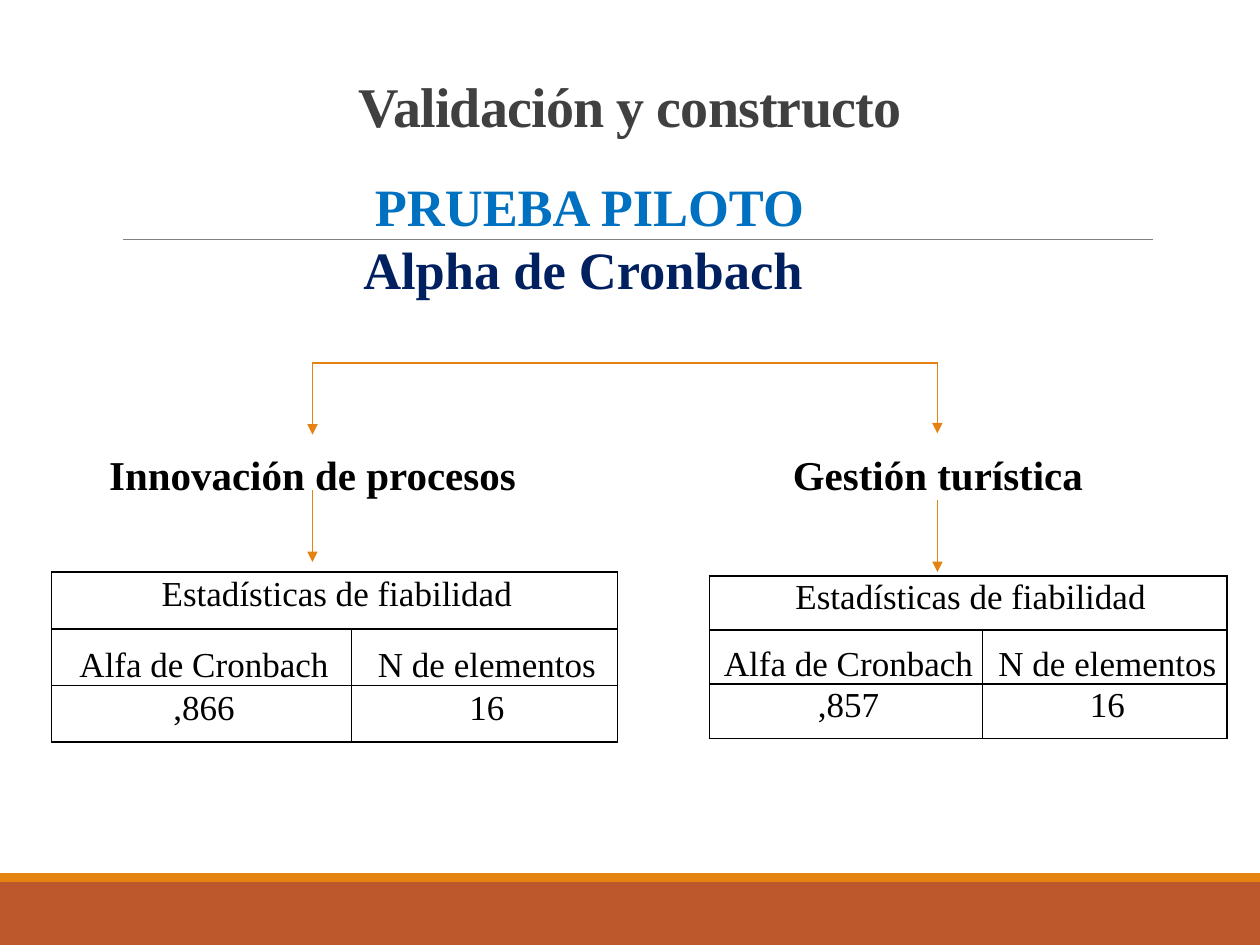
from pptx import Presentation
from pptx.dml.color import RGBColor
from pptx.enum.shapes import MSO_CONNECTOR, MSO_SHAPE
from pptx.enum.text import MSO_ANCHOR, PP_ALIGN
from pptx.oxml.ns import qn
from pptx.util import Inches, Pt
from lxml import etree

LINE, RECT = MSO_CONNECTOR.STRAIGHT, MSO_SHAPE.RECTANGLE
MID, LOW, CENTER = MSO_ANCHOR.MIDDLE, MSO_ANCHOR.BOTTOM, PP_ALIGN.CENTER
FONT = "Times New Roman"
BLACK, DARK, GRAY = (RGBColor.from_string(c) for c in ("000000", "404040", "808080"))
BLUE, NAVY = RGBColor(0x00, 0x70, 0xC0), RGBColor(0x00, 0x20, 0x60)
ORANGE, RUST = RGBColor(0xE4, 0x83, 0x12), RGBColor(0xBD, 0x58, 0x2C)

# Content
TITLE = "Validación y constructo"
HEADS = [("PRUEBA PILOTO", BLUE), ("Alpha de Cronbach ", NAVY)]
BANDS = [(7, 0.5, RUST), (6.93, 0.07, ORANGE)]
CAPTION = "Estadísticas de fiabilidad"
COLS = ["Alfa de Cronbach", "N de elementos"]
# Each branch: label and its box, arrow x and tops, table place, columns, row height, values
BRANCHES = [
    dict(label="Innovación de procesos", box=(0.43, 3.43, 4.85, 0.66),
         x=2.48, tops=(2.88, 3.89), at=(0.41, 4.54), cols=(2.38, 2.11),
         row=0.45, vals=[",866", "16"]),
    dict(label="Gestión turística", box=(5.64, 3.43, 4.36, 0.66),
         x=7.44, tops=(2.87, 3.97), at=(5.63, 4.57), cols=(2.17, 1.94),
         row=0.43, vals=[",857", "16"]),
]
ARROW = 0.57   # arrow length
SHIFT = 0.85   # right inset that centres a label under its arrow

deck = Presentation()
deck.slide_width, deck.slide_height = Inches(10), Inches(7.5)
slide = deck.slides.add_slide(deck.slide_layouts[5])
shapes = slide.shapes


def style(para, size, color, bold=False):
    para.alignment = CENTER
    for run in para.runs:
        font = run.font
        font.name, font.size, font.bold = FONT, Pt(size), bold
        font.color.rgb = color


def add_line(x1, y1, x2, y2, color, width=1, arrow=False):
    line = shapes.add_connector(LINE, *map(Inches, (x1, y1, x2, y2)))
    line.line.color.rgb, line.line.width = color, Pt(width)
    props = line._element.spPr
    if arrow:
        etree.SubElement(props.find(qn("a:ln")), qn("a:tailEnd"), type="triangle")
    etree.SubElement(props, qn("a:effectLst"))


def add_text(box, items, size, right=0.1):
    frame = shapes.add_textbox(*map(Inches, box)).text_frame
    frame.word_wrap, frame.margin_right = True, Inches(right)
    frame.text = "\n".join(text for text, _ in items)
    for para, (_, color) in zip(frame.paragraphs, items):
        style(para, size, color, True)
    return frame


def fill_cell(cell, text, anchor):
    cell.text = text
    cell.margin_left = cell.margin_right = cell.margin_top = cell.margin_bottom = 0
    cell.vertical_anchor = anchor
    para = cell.text_frame.paragraphs[0]
    style(para, 20, BLACK)
    para.line_spacing = Pt(16)
    para._p.get_or_add_pPr().set("marL", str(Inches(0.04)))
    props = cell._tc.get_or_add_tcPr()
    for side in ("lnL", "lnR", "lnT", "lnB"):
        edge = etree.SubElement(props, qn("a:" + side), w=str(Pt(1)))
        paint = etree.SubElement(edge, qn("a:solidFill"))
        etree.SubElement(paint, qn("a:srgbClr"), val=str(BLACK))
    cell.fill.background()


def add_grid(at, cols, row, vals):
    rows = [[CAPTION, ""], COLS, vals]
    size = (sum(cols), row * len(rows))
    grid = shapes.add_table(len(rows), len(cols), *map(Inches, at + size)).table
    grid.first_row = grid.horz_banding = False
    for col, width in zip(grid.columns, cols):
        col.width = Inches(width)
    for r, texts in enumerate(rows):
        for c, text in enumerate(texts):
            fill_cell(grid.cell(r, c), text, LOW if r == 1 else MID)
    grid.cell(0, 0).merge(grid.cell(0, 1))


# Footer bands and rule
for top, height, color in BANDS:
    band = shapes.add_shape(RECT, 0, Inches(top), Inches(10), Inches(height))
    band.shadow.inherit = False
    band.fill.solid()
    band.fill.fore_color.rgb = color
    band.line.fill.background()
add_line(0.98, 1.9, 9.15, 1.9, GRAY, 0.5)

# Title and headings
title = shapes.title
title.left, title.top, title.width, title.height = map(Inches, (0, 0.49, 10, 0.66))
title.text_frame.text = TITLE
title.text_frame.vertical_anchor = LOW
para = title.text_frame.paragraphs[0]
style(para, 32, DARK, True)
para.line_spacing = 0.85
para.runs[0].font._element.set("spc", "-50")
add_text((2.1, 1.33, 5.16, 1.62), HEADS, 30)

# Branches: label, table and arrows
for b in BRANCHES:
    add_text(b["box"], [(b["label"], BLACK)], 23.4, SHIFT).vertical_anchor = MID
    add_grid(b["at"], b["cols"], b["row"], b["vals"])
    for top in b["tops"]:
        add_line(b["x"], top, b["x"], top + ARROW, ORANGE, arrow=True)
add_line(BRANCHES[0]["x"], 2.88, BRANCHES[1]["x"], 2.88, ORANGE)

deck.save("out.pptx")
